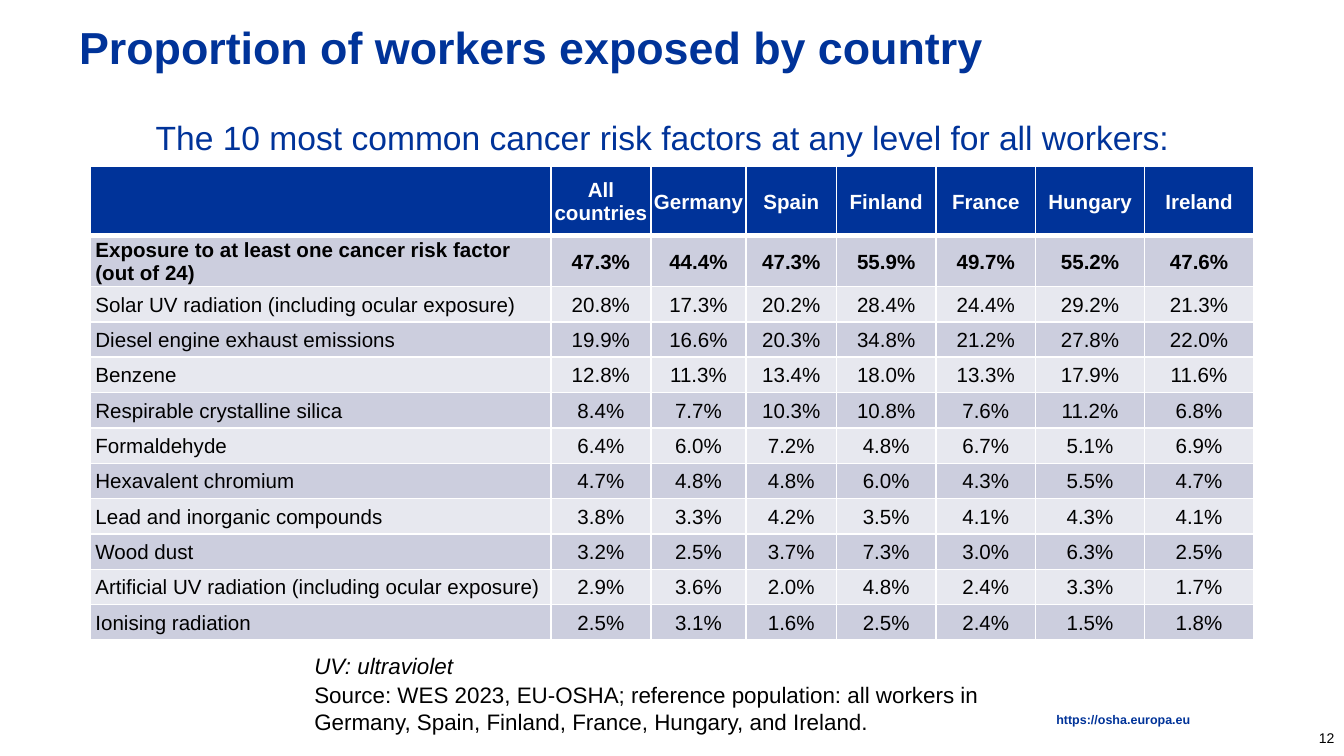
from dataclasses import dataclass

from lxml.etree import SubElement
from pptx import Presentation
from pptx.dml.color import RGBColor
from pptx.enum.text import MSO_ANCHOR as Anchor, PP_ALIGN as Align
from pptx.oxml.ns import qn
from pptx.util import Inches, Pt


@dataclass(frozen=True)
class Theme:
    """Colours, type sizes and line widths of the slide."""
    font: str = "Arial"
    blue: str = "003399"
    black: str = "000000"
    white: str = "FFFFFF"
    bands: tuple = ("CCCEDE", "E7E8EF")
    title: float = 24
    subtitle: float = 18
    note: float = 12
    cell: float = 11
    number: float = 7.5
    link: float = 6.75
    rule: float = 1
    header_rule: float = 3


@dataclass(frozen=True)
class Box:
    """A rectangle in columns and rows of the slide grid."""
    left: float
    top: float
    width: float
    height: float


THEME = Theme()
GRID_COLUMNS, GRID_ROWS = 100, 56.25
TEXT_MARGINS = (1, 0.5, 1, 0.5)
COLUMN_WIDTHS = (34.25, 7.4, 7.1, 6.7, 7.4, 7.4, 8.1, 8.1)
HEADER_HEIGHT, TOTAL_HEIGHT = 5.15, 3.7
HEADINGS = ("", "All countries", "Germany", "Spain", "Finland", "France", "Hungary", "Ireland")
EXPOSURES = (
    ("Exposure to at least one cancer risk factor (out of 24)", 47.3, 44.4, 47.3, 55.9, 49.7, 55.2, 47.6),
    ("Solar UV radiation (including ocular exposure)", 20.8, 17.3, 20.2, 28.4, 24.4, 29.2, 21.3),
    ("Diesel engine exhaust emissions", 19.9, 16.6, 20.3, 34.8, 21.2, 27.8, 22.0),
    ("Benzene", 12.8, 11.3, 13.4, 18.0, 13.3, 17.9, 11.6),
    ("Respirable crystalline silica", 8.4, 7.7, 10.3, 10.8, 7.6, 11.2, 6.8),
    ("Formaldehyde", 6.4, 6.0, 7.2, 4.8, 6.7, 5.1, 6.9),
    ("Hexavalent chromium", 4.7, 4.8, 4.8, 6.0, 4.3, 5.5, 4.7),
    ("Lead and inorganic compounds", 3.8, 3.3, 4.2, 3.5, 4.1, 4.3, 4.1),
    ("Wood dust", 3.2, 2.5, 3.7, 7.3, 3.0, 6.3, 2.5),
    ("Artificial UV radiation (including ocular exposure)", 2.9, 3.6, 2.0, 4.8, 2.4, 3.3, 1.7),
    ("Ionising radiation", 2.5, 3.1, 1.6, 2.5, 2.4, 1.5, 1.8),
)


def grid(units):
    """Turn grid units into a length."""
    return Inches(units / 10)


def set_margins(holder, margins):
    """Set the left, top, right and bottom margins of a frame or cell."""
    for side, units in zip(("left", "top", "right", "bottom"), margins):
        setattr(holder, f"margin_{side}", grid(units))


def add_run(paragraph, text, size, color, bold=False, italic=False):
    """Add one styled run to a paragraph."""
    run = paragraph.add_run()
    run.text = text
    font = run.font
    font.name, font.size, font.bold, font.italic = THEME.font, Pt(size), bold, italic
    font.color.rgb = RGBColor.from_string(color)


def add_text(slide, box, lines, size, color, align=Align.LEFT, anchor=Anchor.TOP,
             margins=TEXT_MARGINS, spacing=None, **style):
    """Add a text box holding one paragraph of broken lines."""
    shape = slide.shapes.add_textbox(*map(grid, (box.left, box.top, box.width, box.height)))
    frame = shape.text_frame
    frame.word_wrap, frame.vertical_anchor = True, anchor
    set_margins(frame, margins)
    paragraph = frame.paragraphs[0]
    paragraph.alignment, paragraph.line_spacing = align, spacing
    for index, line in enumerate(lines):
        if index:
            paragraph.add_line_break()
        add_run(paragraph, line, size, color, **style)


def set_borders(cell, top, bottom):
    """Draw white borders round a cell."""
    properties = cell._tc.get_or_add_tcPr()
    widths = {"L": THEME.rule, "R": THEME.rule, "T": top, "B": bottom}
    for side, width in widths.items():
        line = SubElement(properties, qn(f"a:ln{side}"), w=str(Pt(width)))
        fill = SubElement(line, qn("a:solidFill"))
        SubElement(fill, qn("a:srgbClr"), val=THEME.white)


def style_cell(cell, text, row, column):
    """Fill and letter a cell according to its row and column."""
    header, label = row == 0, column == 0
    set_borders(cell, THEME.header_rule if row == 1 else THEME.rule,
                THEME.header_rule if header else THEME.rule)
    cell.fill.solid()
    cell.fill.fore_color.rgb = RGBColor.from_string(
        THEME.blue if header else THEME.bands[(row - 1) % 2])
    cell.vertical_anchor = Anchor.MIDDLE
    set_margins(cell, (0.4 if label else 0.1, 0.1, 0.1, 0))
    paragraph = cell.text_frame.paragraphs[0]
    paragraph.alignment = Align.LEFT if label else Align.CENTER
    if text:
        add_run(paragraph, text, THEME.cell, THEME.white if header else THEME.black, bold=row < 2)


def add_exposure_table(slide, box):
    """Add the table of exposure by risk factor and country."""
    rows = [HEADINGS] + [(label, *(f"{share:.1f}%" for share in shares))
                         for label, *shares in EXPOSURES]
    table = slide.shapes.add_table(
        len(rows), len(HEADINGS),
        *map(grid, (box.left, box.top, box.width, box.height))).table
    table.horz_banding = False
    for column, width in zip(table.columns, COLUMN_WIDTHS):
        column.width = grid(width * box.width / sum(COLUMN_WIDTHS))
    factor_height = (box.height - HEADER_HEIGHT - TOTAL_HEIGHT) / (len(rows) - 2)
    heights = [HEADER_HEIGHT, TOTAL_HEIGHT] + [factor_height] * (len(rows) - 2)
    for row, (texts, height) in enumerate(zip(rows, heights)):
        table.rows[row].height = grid(height)
        for column, text in enumerate(texts):
            style_cell(table.cell(row, column), text, row, column)


def add_heading(slide, box):
    """Add the title and, below it, the subtitle."""
    add_text(slide, Box(box.left, box.top, box.width, 4),
             ["Proportion of workers exposed by country"],
             THEME.title, THEME.blue, anchor=Anchor.MIDDLE, bold=True)
    add_text(slide, Box(box.left + 5.7, box.top + 6.7, box.width - 4, 4),
             ["The 10 most common cancer risk factors at any level for all workers:"],
             THEME.subtitle, THEME.blue)


def add_notes_below_table(slide, box):
    """Add the abbreviation and the source line."""
    add_text(slide, Box(box.left, box.top, 50, 3), ["UV: ultraviolet"],
             THEME.note, THEME.black, italic=True)
    add_text(slide, Box(box.left, box.top + 2.2, box.width, 5),
             ["Source: WES 2023, EU-OSHA; reference population: all workers in",
              "Germany, Spain, Finland, France, Hungary, and Ireland."],
             THEME.note, THEME.black)


def add_footer(slide, box):
    """Add the web address and the page number."""
    add_text(slide, Box(box.left, box.top, 63.8, 0.9), ["https://osha.europa.eu"],
             THEME.link, THEME.blue, align=Align.RIGHT, margins=(0, 0, 0, 0),
             spacing=0.9, bold=True)
    add_text(slide, Box(box.left + box.width - 6.7, box.top + 0.3, 6.7, 3), ["12"],
             THEME.number, THEME.black, align=Align.RIGHT, anchor=Anchor.MIDDLE,
             margins=(0.7, 0.4, 0.7, 0.4))


def main():
    """Build and save the slide."""
    presentation = Presentation()
    presentation.slide_width, presentation.slide_height = grid(GRID_COLUMNS), grid(GRID_ROWS)
    slide = presentation.slides.add_slide(presentation.slide_layouts[6])
    add_footer(slide, Box(24.8, 53.1, 75.2, 3.1))
    add_heading(slide, Box(4.9, 1.5, 82.7, 10.7))
    add_exposure_table(slide, Box(6.7, 12.4, 86.6, 35.15))
    add_notes_below_table(slide, Box(22.4, 48, 63, 7.2))
    presentation.save("out.pptx")


if __name__ == "__main__":
    main()
